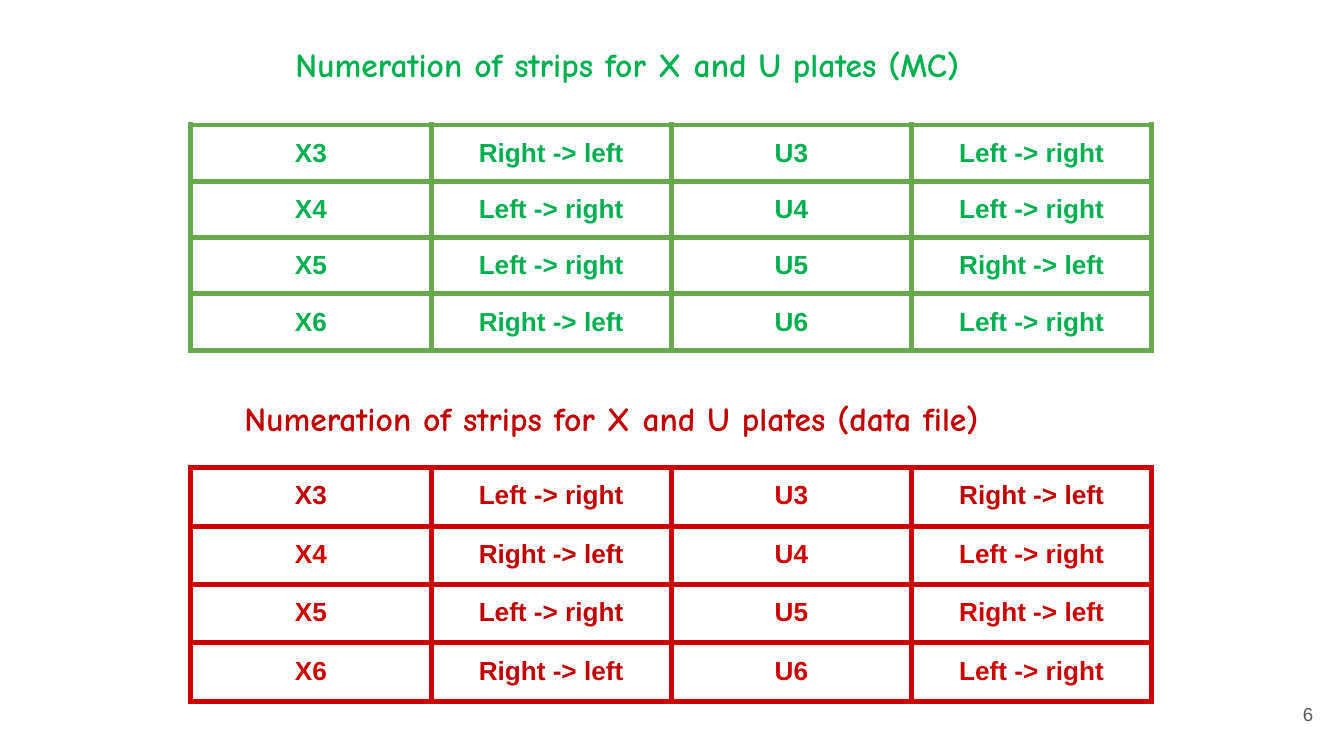
from lxml import etree
from pptx import Presentation
from pptx.dml.color import RGBColor
from pptx.enum.text import MSO_ANCHOR, MSO_AUTO_SIZE, PP_ALIGN
from pptx.oxml.ns import qn
from pptx.util import Inches, Pt

LEFT, CENTER, RIGHT = PP_ALIGN.LEFT, PP_ALIGN.CENTER, PP_ALIGN.RIGHT
TOP, MIDDLE = MSO_ANCHOR.TOP, MSO_ANCHOR.MIDDLE
GROW = MSO_AUTO_SIZE.SHAPE_TO_FIT_TEXT

COLORS = {
    "green": "00B050",
    "green border": "6AA84F",
    "dark red": "C00000",
    "red": "CC0000",
    "gray": "595959",
}
RTL, LTR = "Right -> left", "Left -> right"

TITLES = [
    ("Numeration of strips for X and U plates (MC)", (2.1, 0.23, 6.18, 0.5), "green"),
    ("Numeration of strips for X and U plates (data file)", (1.72, 2.86, 6.56, 0.5), "dark red"),
]
# Cells listed under "accents" (row, column) take the accent colour.
TABLES = [
    {
        "top": 0.93, "height": 1.67, "border": "green border",
        "color": "green", "accent": "green", "accents": [],
        "rows": [
            ("X3", RTL, "U3", LTR),
            ("X4", LTR, "U4", LTR),
            ("X5", LTR, "U5", RTL),
            ("X6", RTL, "U6", LTR),
        ],
    },
    {
        "top": 3.48, "height": 1.74, "border": "red",
        "color": "red", "accent": "dark red",
        "accents": [(0, 0), (0, 1), (0, 3), (1, 1), (2, 1), (3, 1)],
        "rows": [
            ("X3", LTR, "U3", RTL),
            ("X4", RTL, "U4", LTR),
            ("X5", LTR, "U5", RTL),
            ("X6", RTL, "U6", LTR),
        ],
    },
]
PAGE_NUMBER = "6"
SLIDE_WIDTH = Inches(10)
SLIDE_HEIGHT = SLIDE_WIDTH * 9 // 16
TABLE_LEFT, TABLE_WIDTH = 1.42, 7.15
INSET = Inches(0.1)
BORDER_WIDTH = Pt(3)


def write(frame, text, font, size, color, align, bold=True):
    para = frame.paragraphs[0]
    para.alignment = align
    span = para.add_run()
    span.text = text
    span.font.name = font
    span.font.size = Pt(size)
    span.font.bold = bold
    span.font.color.rgb = RGBColor.from_string(COLORS[color])


def set_insets(holder):
    holder.margin_left = holder.margin_right = INSET
    holder.margin_top = holder.margin_bottom = INSET


def add_text(page, bounds, anchor=TOP):
    """Add an empty wrapping text box and return its text frame."""
    frame = page.shapes.add_textbox(*map(Inches, bounds)).text_frame
    frame.word_wrap = True
    frame.vertical_anchor = anchor
    set_insets(frame)
    return frame


def set_borders(cell, color):
    properties = cell._tc.get_or_add_tcPr()
    for position, side in enumerate(("lnL", "lnR", "lnT", "lnB")):
        line = etree.Element(qn(f"a:{side}"), w=str(BORDER_WIDTH))
        fill = etree.SubElement(line, qn("a:solidFill"))
        etree.SubElement(fill, qn("a:srgbClr"), val=COLORS[color])
        properties.insert(position, line)


def add_strip_table(page, data):
    rows = data["rows"]
    bounds = (TABLE_LEFT, data["top"], TABLE_WIDTH, data["height"])
    # add_table shares the width and height equally among columns and rows.
    table = page.shapes.add_table(len(rows), len(rows[0]), *map(Inches, bounds)).table
    table.first_row = table.horz_banding = False
    for r, values in enumerate(rows):
        for c, text in enumerate(values):
            cell = table.cell(r, c)
            cell.fill.background()
            set_insets(cell)
            set_borders(cell, data["border"])
            color = data["accent"] if (r, c) in data["accents"] else data["color"]
            write(cell.text_frame, text, "Arial", 14, color, CENTER)


def main():
    deck = Presentation()
    deck.slide_width, deck.slide_height = SLIDE_WIDTH, SLIDE_HEIGHT
    page = deck.slides.add_slide(deck.slide_layouts[6])
    for data in TABLES:
        add_strip_table(page, data)
    for text, bounds, color in TITLES:
        frame = add_text(page, bounds)
        frame.auto_size = GROW
        write(frame, text, "Comic Neue", 18, color, LEFT)
    number = add_text(page, (9.27, 5.1, 0.6, 0.43), MIDDLE)
    write(number, PAGE_NUMBER, "Arial", 10, "gray", RIGHT, bold=False)
    deck.save("out.pptx")


if __name__ == "__main__":
    main()
